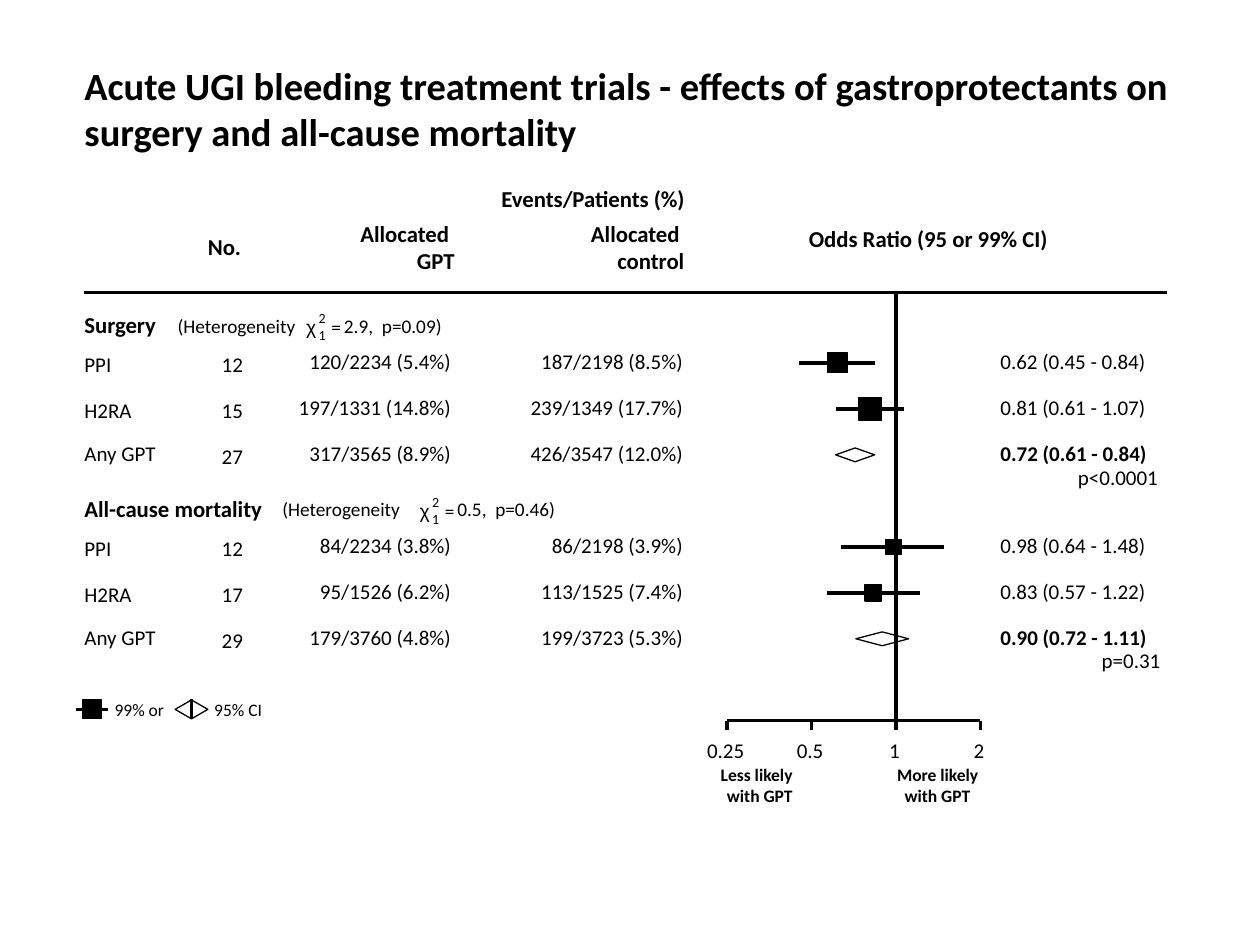
from dataclasses import dataclass
from math import log2

from lxml import etree
from pptx import Presentation
from pptx.dml.color import RGBColor
from pptx.enum import shapes as kinds, text as txt
from pptx.oxml.ns import qn
from pptx.util import Inches, Pt

BLACK = "000000"
LEFT, MID, RIGHT = txt.PP_ALIGN.LEFT, txt.PP_ALIGN.CENTER, txt.PP_ALIGN.RIGHT
HIGH = {8: 0.14, 10: 0.17, 11: 0.19, 12: 0.2, 13: 0.22}  # box height by text size
PITCH = 0.365
AXIS = 5.72
RULE = 2.32


@dataclass
class Trial:
    name: str
    num: str
    drug: str
    ctrl: str
    odds: float
    low: float
    high: float
    side: float = 0  # square side; 0 means a pooled diamond


@dataclass
class Group:
    name: str
    wide: float
    top: float  # centre of the first row
    het: float
    chi: float
    stat: str
    prob: str
    edge: float
    rows: list[Trial]


GROUPS = [
    Group("Surgery", 0.57, 2.88, 1.41, 2.43, "2.9,  p=0.09)", "p<0.0001", 9.19, [
        Trial("PPI", "12", "120/2234 (5.4%)", "187/2198 (8.5%)", 0.62, 0.45, 0.84, 0.16),
        Trial("H2RA", "15", "197/1331 (14.8%)", "239/1349 (17.7%)", 0.81, 0.61, 1.07, 0.18),
        Trial("Any GPT", "27", "317/3565 (8.9%)", "426/3547 (12.0%)", 0.72, 0.61, 0.84)]),
    Group("All-cause mortality", 1.43, 4.34, 2.24, 3.33, "0.5,  p=0.46)", "p=0.31", 9.21, [
        Trial("PPI", "12", "84/2234 (3.8%)", "86/2198 (3.9%)", 0.98, 0.64, 1.48, 0.12),
        Trial("H2RA", "17", "95/1526 (6.2%)", "113/1525 (7.4%)", 0.83, 0.57, 1.22, 0.13),
        Trial("Any GPT", "29", "179/3760 (4.8%)", "199/3723 (5.3%)", 0.90, 0.72, 1.11)]),
]

# text, left, top, width, size, bold
LABELS = [
    ("No.", 1.65, 1.85, 0.27, 13, True),
    ("Events/Patients (%)", 3.98, 1.47, 1.45, 13, True),
    ("Allocated", 2.86, 1.74, 0.71, 13, True),
    ("GPT", 3.31, 1.96, 0.3, 13, True),
    ("Allocated", 4.69, 1.74, 0.71, 13, True),
    ("control", 4.9, 1.96, 0.54, 13, True),
    ("Odds Ratio (95 or 99% CI)", 6.42, 1.78, 1.93, 13, True),
    ("Less likely", 5.72, 6.06, 0.58, 10, True),
    ("with GPT", 5.77, 6.23, 0.53, 10, True),
    ("More likely", 7.12, 6.06, 0.66, 10, True),
    ("with GPT", 7.18, 6.23, 0.53, 10, True),
    ("99% or", 0.91, 5.55, 0.4, 10, False),
    ("95% CI", 1.7, 5.55, 0.39, 10, False),
]

deck = Presentation()
deck.slide_width, deck.slide_height = Inches(10), Inches(7.5)
slide = deck.slides.add_slide(deck.slide_layouts[5])


def paint(hue: str) -> RGBColor:
    return RGBColor.from_string(hue)


def scale(odds: float) -> float:
    """Horizontal place of an odds ratio on the log axis."""
    return 7.11 + 0.67 * log2(odds)


def clear(frame) -> None:
    """Drop margins, wrapping and centring from a text frame."""
    frame.margin_left = frame.margin_right = frame.margin_top = frame.margin_bottom = 0
    frame.word_wrap = False
    frame.auto_size = txt.MSO_AUTO_SIZE.NONE
    frame.vertical_anchor = txt.MSO_ANCHOR.TOP


def write(para, words: str, size: int, bold: bool = False, face: str = "Calibri") -> None:
    run = para.add_run()
    run.text = words
    run.font.size, run.font.bold, run.font.name = Pt(size), bold, face
    run.font.color.rgb = paint(BLACK)


def label(words: str, x: float, y: float, wide: float, size: int = 12,
          bold: bool = False, align=LEFT, face: str = "Calibri") -> None:
    box = slide.shapes.add_textbox(Inches(x), Inches(y), Inches(wide), Inches(HIGH[size]))
    clear(box.text_frame)
    para = box.text_frame.paragraphs[0]
    para.alignment = align
    write(para, words, size, bold, face)


def line(x1: float, y1: float, x2: float, y2: float) -> None:
    rule = slide.shapes.add_connector(
        kinds.MSO_CONNECTOR.STRAIGHT, Inches(x1), Inches(y1), Inches(x2), Inches(y2))
    rule.line.color.rgb = paint(BLACK)
    rule.line.width = 0
    etree.SubElement(rule._element.spPr, qn("a:effectLst"))


def mark(kind, x: float, y: float, wide: float, high: float, solid: bool) -> None:
    """Draw a shape centred on x, y."""
    form = slide.shapes.add_shape(kind, Inches(x - wide / 2), Inches(y - high / 2),
                                  Inches(wide), Inches(high))
    form.shadow.inherit = False
    form.line.color.rgb = paint(BLACK)
    form.line.width = 0
    if solid:
        form.fill.solid()
        form.fill.fore_color.rgb = paint(BLACK)
    else:
        form.fill.background()


def square(x: float, y: float, side: float) -> None:
    mark(kinds.MSO_SHAPE.RECTANGLE, x, y, side, side, True)


def diamond(x: float, y: float, wide: float, high: float) -> None:
    mark(kinds.MSO_SHAPE.DIAMOND, x, y, wide, high, False)


def count(words: str, edge: float, y: float) -> None:
    """Write a count that ends at the given right edge."""
    wide = 0.08 * len(words) - 0.06
    label(words, edge - wide, y, wide, align=RIGHT)


def draw_trial(row: Trial, y: float) -> None:
    pooled = not row.side
    label(row.name, 0.67, y - (0.11 if pooled else 0.09), 0.59)
    label(row.num, 1.76, y - 0.09, 0.17)
    count(row.drug, 3.58, y - 0.11)
    count(row.ctrl, 5.42, y - 0.11)
    low, high = scale(row.low), scale(row.high)
    if pooled:
        diamond((low + high) / 2, y, high - low, 0.11)
    else:
        square(scale(row.odds), y, row.side)
        line(low, y, high, y)
    label(f"{row.odds:.2f} ({row.low:.2f} - {row.high:.2f})", 7.94, y - 0.11, 1.17, bold=pooled)


def draw_group(group: Group) -> None:
    top, chi = group.top - 0.41, group.chi
    label(group.name, 0.67, top, group.wide, 13, True)
    label("(Heterogeneity", group.het, top + 0.02, 0.98, 11)
    label("χ", chi, top + 0.03, 0.08, 11, face="Arial")
    label("2", chi + 0.1, top - 0.01, 0.06, 8)
    label("1", chi + 0.1, top + 0.12, 0.06, 8)
    label("=", chi + 0.2, top + 0.03, 0.08, 11)
    label(group.stat, chi + 0.3, top + 0.02, 0.78, 11)
    for i, row in enumerate(group.rows):
        draw_trial(row, group.top + i * PITCH)
    label(group.prob, group.edge - 0.65, group.top + 2.2 * PITCH, 0.65, align=RIGHT)


def draw_axis() -> None:
    line(0.67, RULE, 9.26, RULE)
    line(scale(1), AXIS, scale(1), RULE)
    line(scale(0.25), AXIS, scale(2), AXIS)
    for odds in (0.25, 0.5, 1, 2):
        x = scale(odds)
        line(x, AXIS, x, AXIS + 0.07)
        label(f"{odds}", x - 0.16, AXIS + 0.13, 0.3, align=MID)


def draw_title() -> None:
    title = slide.shapes.title
    title.left, title.top = Inches(0.67), Inches(0.49)
    title.width, title.height = Inches(8.79), Inches(0.74)
    frame = title.text_frame
    clear(frame)
    for i, words in enumerate((
            "Acute UGI bleeding treatment trials - effects of gastroprotectants on",
            "surgery and all-cause mortality")):
        para = frame.add_paragraph() if i else frame.paragraphs[0]
        para.alignment = LEFT
        write(para, words, 22, True)


draw_title()
draw_axis()
for item in LABELS:
    label(*item)
for group in GROUPS:
    draw_group(group)
square(0.73, 5.63, 0.15)
line(0.6, 5.63, 0.86, 5.63)
diamond(1.52, 5.63, 0.26, 0.15)
line(1.52, 5.7, 1.52, 5.55)
deck.save("out.pptx")
